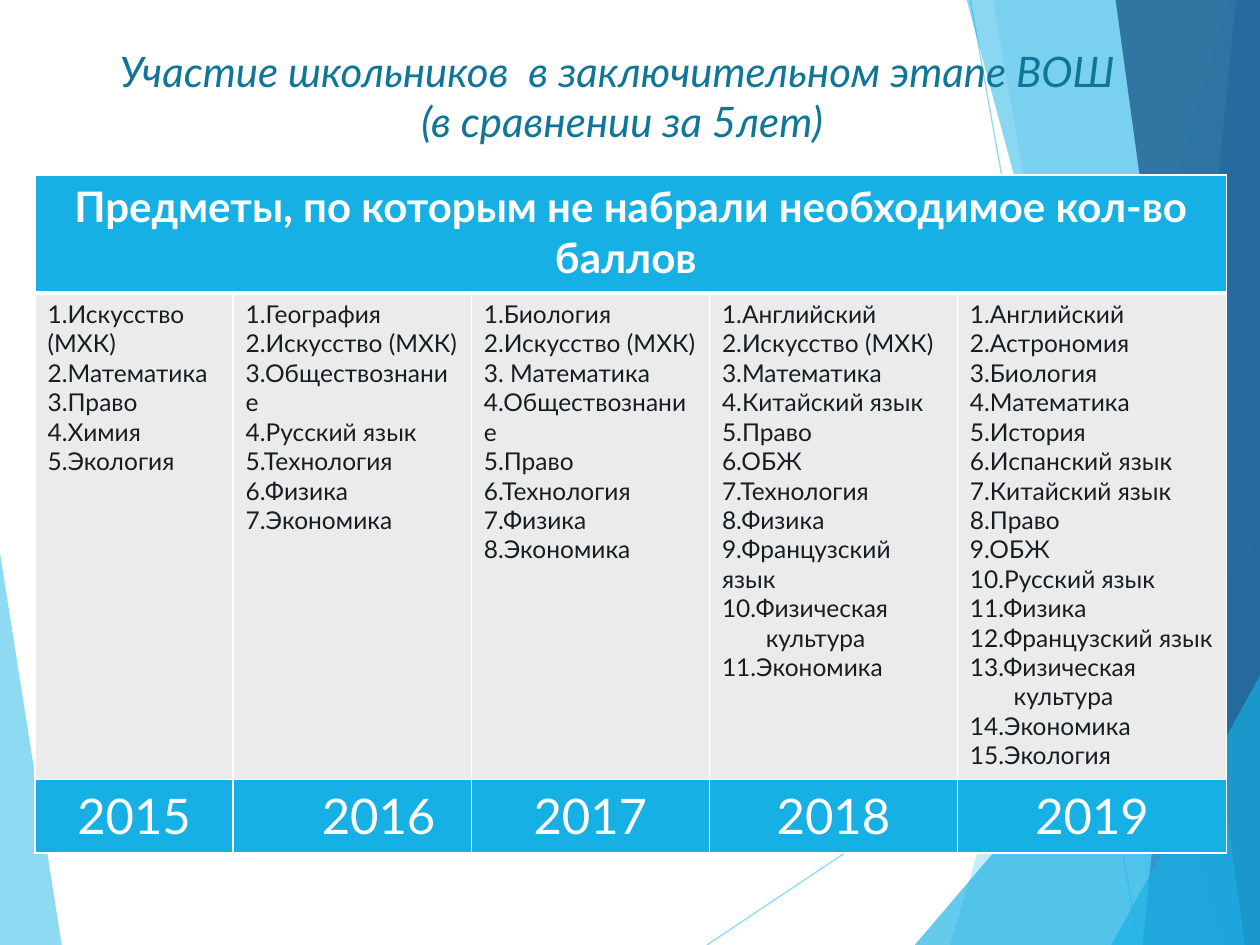
from typing import NamedTuple

from lxml.etree import SubElement
from pptx import Presentation
from pptx.dml.color import RGBColor
from pptx.enum.shapes import MSO_CONNECTOR
from pptx.enum.text import MSO_ANCHOR, PP_ALIGN
from pptx.oxml.ns import qn
from pptx.util import Pt

FONT = "Lato"
WHITE = RGBColor(0xFF, 0xFF, 0xFF)
SKY = RGBColor(0x5F, 0xCB, 0xEF)
AZURE = RGBColor(0x17, 0xB0, 0xE4)
BLUE = RGBColor(0x2E, 0x83, 0xC3)
NAVY = RGBColor(0x22, 0x62, 0x92)
TEAL = RGBColor(0x0F, 0x76, 0x98)
INK = RGBColor(0x16, 0x1E, 0x22)
PALE = RGBColor(0xEB, 0xEB, 0xEB)

WIDTH, HEIGHT = 720, 540
Point = tuple[float, float]


class Facet(NamedTuple):
    points: list[Point]
    color: RGBColor
    opacity: int


class Ray(NamedTuple):
    start: Point
    end: Point


class Style(NamedTuple):
    size: float
    color: RGBColor
    bold: bool = False
    italic: bool = False
    align: PP_ALIGN = PP_ALIGN.LEFT


class Year(NamedTuple):
    label: str
    width: float
    subjects: list[str]
    label_indent: float = 0


def right_band(top: float, bottom: float) -> list[Point]:
    return [(top, 0), (bottom, HEIGHT), (WIDTH, HEIGHT), (WIDTH, 0)]


def right_corner(left: float, top: float) -> list[Point]:
    return [(left, HEIGHT), (WIDTH, top), (WIDTH, HEIGHT)]


LEFT_FACET = Facet([(0, 316), (35.3, HEIGHT), (0, HEIGHT)], SKY, 70)
RAYS = [Ray((404, HEIGHT), (WIDTH, 329)), Ray((554.5, 0), (651, HEIGHT))]
RIGHT_FACETS = [
    Facet(right_band(702, 543), SKY, 36),
    Facet(right_band(567.5, 661.7), SKY, 20),
    Facet(right_corner(522.7, 309), AZURE, 66),
    Facet(right_band(552.4, 698.4), AZURE, 50),
    Facet(right_band(706.3, 653), BLUE, 70),
    Facet(right_band(637.5, 711.4), NAVY, 82),
    Facet(right_corner(635, 386), AZURE, 66),
]

TITLE = ["Участиe школьников  в заключительном этапе ВОШ ", "(в сравнении за 5лет)"]
HEADER = "Предметы, по которым не набрали необходимое кол-во баллов "
CONTINUED = "культура"
YEARS = [
    Year("2015", 113.2, ["1.Искусство (МХК)", "2.Математика", "3.Право", "4.Химия",
                         "5.Экология"]),
    Year("2016", 136.1, ["1.География", "2.Искусство (МХК)", "3.Обществознание",
                         "4.Русский язык", "5.Технология", "6.Физика",
                         "7.Экономика"], 43.5),
    Year("2017", 136.1, ["1.Биология", "2.Искусство (МХК)", "3. Математика",
                         "4.Обществознание", "5.Право", "6.Технология",
                         "7.Физика 8.Экономика"]),
    Year("2018", 141.7, ["1.Английский", "2.Искусство (МХК)", "3.Математика",
                         "4.Китайский язык", "5.Право", "6.ОБЖ", "7.Технология",
                         "8.Физика", "9.Французский язык", "10.Физическая",
                         CONTINUED, "11.Экономика"]),
    Year("2019", 153.9, ["1.Английский", "2.Астрономия", "3.Биология", "4.Математика",
                         "5.История", "6.Испанский язык", "7.Китайский язык",
                         "8.Право", "9.ОБЖ", "10.Русский язык", "11.Физика",
                         "12.Французский язык", "13.Физическая", CONTINUED,
                         "14.Экономика", "15.Экология"]),
]
ROW_HEIGHTS = [67.5, 278, 42]

TITLE_STYLE = Style(24, TEAL, italic=True, align=PP_ALIGN.CENTER)
HEADER_STYLE = Style(24, WHITE, bold=True, align=PP_ALIGN.CENTER)
SUBJECT_STYLE = Style(14, INK)
YEAR_STYLE = Style(28, WHITE, align=PP_ALIGN.CENTER)


def set_opacity(fill_parent, percent: int) -> None:
    color = next(fill_parent.iter(qn("a:srgbClr")))
    SubElement(color, qn("a:alpha"), val=str(percent * 1000))


def draw_facet(page, facet: Facet) -> None:
    start, *others = [(Pt(x), Pt(y)) for x, y in facet.points]
    builder = page.shapes.build_freeform(*start)
    builder.add_line_segments(others, close=True)
    shape = builder.convert_to_shape()
    shape.shadow.inherit = False
    shape.fill.solid()
    shape.fill.fore_color.rgb = facet.color
    set_opacity(shape.fill._xPr, facet.opacity)
    shape.line.fill.background()


def draw_ray(page, ray: Ray) -> None:
    line = page.shapes.add_connector(
        MSO_CONNECTOR.STRAIGHT, *(Pt(value) for value in ray.start + ray.end))
    line.line.color.rgb = SKY
    line.line.width = Pt(0.75)
    properties = line._element.spPr
    set_opacity(properties, 70)
    SubElement(properties, qn("a:effectLst"))


def write(frame, lines: list[str], style: Style, indents: dict[str, float] = {}) -> None:
    for index, text in enumerate(lines):
        para = frame.add_paragraph() if index else frame.paragraphs[0]
        para.text = text
        para.alignment = style.align
        para.font.name = FONT
        para.font.size = Pt(style.size)
        para.font.bold = style.bold
        para.font.italic = style.italic
        para.font.color.rgb = style.color
        if indents.get(text):
            para._p.get_or_add_pPr().set("marL", str(Pt(indents[text])))


def format_cell(cell, color: RGBColor, top: float = 1, bottom: float = 1) -> None:
    properties = cell._tc.get_or_add_tcPr()
    for side, width in (("L", 1), ("R", 1), ("T", top), ("B", bottom)):
        border = SubElement(properties, qn(f"a:ln{side}"), w=str(Pt(width)))
        SubElement(SubElement(border, qn("a:solidFill")), qn("a:srgbClr"), val=str(WHITE))
    cell.fill.solid()
    cell.fill.fore_color.rgb = color


def draw_title(page) -> None:
    box = page.shapes.add_textbox(Pt(0), Pt(15), Pt(711), Pt(79))
    box.text_frame.word_wrap = True
    box.text_frame.vertical_anchor = MSO_ANCHOR.MIDDLE
    write(box.text_frame, TITLE, TITLE_STYLE)


def draw_table(page) -> None:
    total_width = sum(year.width for year in YEARS)
    table = page.shapes.add_table(len(ROW_HEIGHTS), len(YEARS), Pt(20), Pt(100),
                                  Pt(total_width), Pt(sum(ROW_HEIGHTS))).table
    table.horz_banding = False
    for row, height in zip(table.rows, ROW_HEIGHTS):
        row.height = Pt(height)
    for index, year in enumerate(YEARS):
        table.columns[index].width = Pt(year.width)
        header, subjects, label = (table.cell(row, index) for row in range(3))
        format_cell(header, AZURE, bottom=3)
        format_cell(subjects, PALE, top=3)
        format_cell(label, AZURE)
        write(subjects.text_frame, year.subjects, SUBJECT_STYLE, {CONTINUED: 25})
        label_align = PP_ALIGN.LEFT if year.label_indent else PP_ALIGN.CENTER
        write(label.text_frame, [year.label], YEAR_STYLE._replace(align=label_align),
              {year.label: year.label_indent})
    table.cell(0, 0).merge(table.cell(0, len(YEARS) - 1))
    write(table.cell(0, 0).text_frame, [HEADER], HEADER_STYLE)


def main() -> None:
    deck = Presentation()
    deck.slide_width, deck.slide_height = Pt(WIDTH), Pt(HEIGHT)
    page = deck.slides.add_slide(deck.slide_layouts[6])
    draw_facet(page, LEFT_FACET)
    for ray in RAYS:
        draw_ray(page, ray)
    for facet in RIGHT_FACETS:
        draw_facet(page, facet)
    draw_title(page)
    draw_table(page)
    deck.save("out.pptx")


if __name__ == "__main__":
    main()
